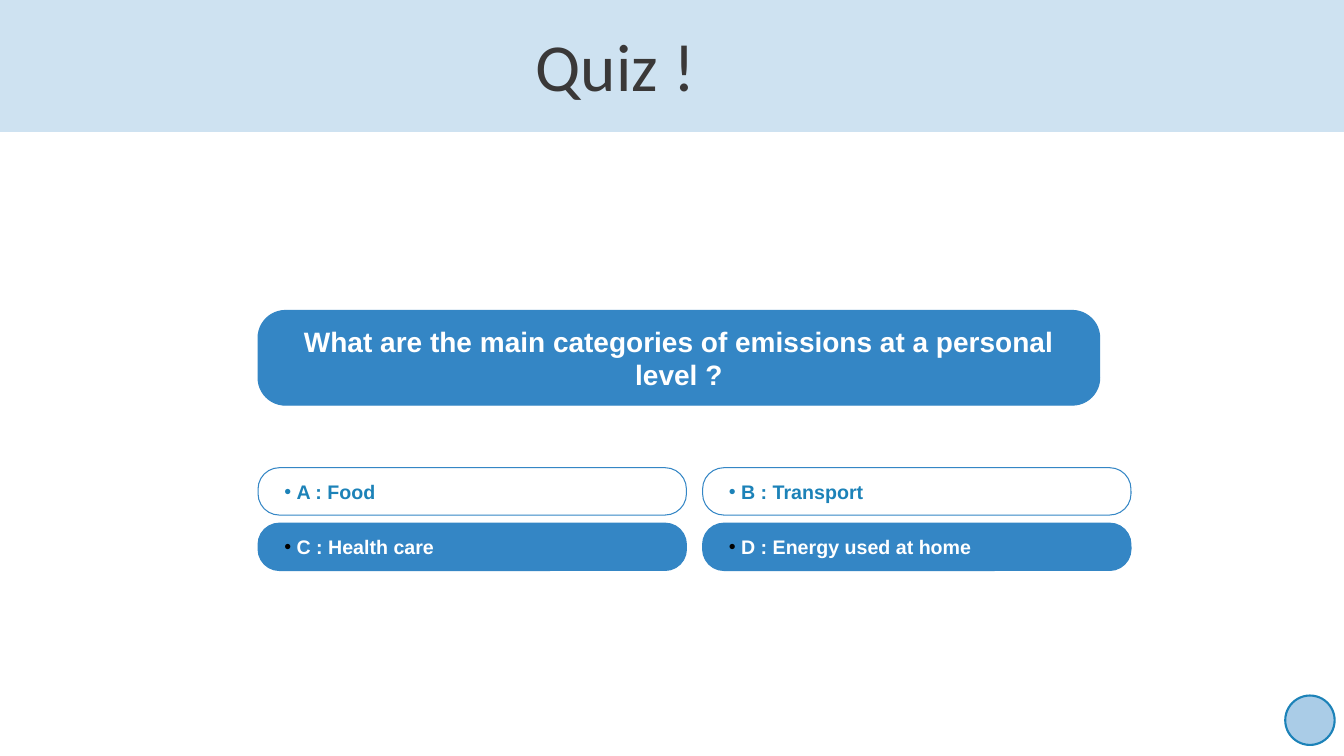
from dataclasses import dataclass

from lxml.etree import SubElement
from pptx import Presentation
from pptx.dml.color import RGBColor
from pptx.enum.shapes import MSO_SHAPE
from pptx.enum.text import MSO_ANCHOR, MSO_AUTO_SIZE, PP_ALIGN
from pptx.oxml.ns import qn
from pptx.shapes.autoshape import Shape
from pptx.slide import Slide
from pptx.util import Inches, Length, Pt

WHITE = RGBColor(0xFF, 0xFF, 0xFF)
BLACK = RGBColor(0x00, 0x00, 0x00)
BLUE = RGBColor(0x34, 0x86, 0xC5)
DEEP = RGBColor(0x1C, 0x82, 0xB8)
PALE = RGBColor(0xCE, 0xE2, 0xF1)
SKY = RGBColor(0xAA, 0xCC, 0xE7)
GREY = RGBColor(0x3A, 0x38, 0x38)

# The grid has ten columns and ten rows to the inch
COLS, ROWS = 133.33, 75
LEFT, TOP = 25.6, 46.4
STEP, DROP = 44.1, 5.5


@dataclass(frozen=True)
class Area:
    col: float
    row: float
    wide: float
    high: float

    def box(self) -> tuple[Length, ...]:
        return tuple(Inches(n / 10) for n in (self.col, self.row, self.wide, self.high))


@dataclass(frozen=True)
class Look:
    fill: RGBColor
    ink: RGBColor
    dot: RGBColor


@dataclass(frozen=True)
class Answer:
    text: str
    col: int
    row: int
    look: Look


LIGHT = Look(WHITE, DEEP, DEEP)
DARK = Look(BLUE, WHITE, BLACK)
ANSWERS = (
    Answer("A : Food", 0, 0, LIGHT),
    Answer("B : Transport", 1, 0, LIGHT),
    Answer("C : Health care", 0, 1, DARK),
    Answer("D : Energy used at home", 1, 1, DARK),
)


def draw(slide: Slide, kind: MSO_SHAPE, area: Area, fill: RGBColor,
         line: RGBColor | None = None, width: float = 0.75) -> Shape:
    shape = slide.shapes.add_shape(kind, *area.box())
    shape.shadow.inherit = False
    shape.fill.solid()
    shape.fill.fore_color.rgb = fill
    if line is None:
        shape.line.fill.background()
    else:
        shape.line.color.rgb = line
        shape.line.width = Pt(width)
    return shape


def write(shape: Shape, text: str, size: int, ink: RGBColor, align: PP_ALIGN,
          face: str = "Arial", bold: bool = True, dot: RGBColor | None = None) -> None:
    frame = shape.text_frame
    frame.text = text
    frame.word_wrap = True
    frame.auto_size = MSO_AUTO_SIZE.NONE
    frame.vertical_anchor = MSO_ANCHOR.MIDDLE
    para = frame.paragraphs[0]
    para.alignment = align
    if dot is not None:
        bullet(para._p.get_or_add_pPr(), dot)
    for run in para.runs:
        run.font.name = face
        run.font.size = Pt(size)
        run.font.bold = bold
        run.font.color.rgb = ink


def bullet(props, dot: RGBColor) -> None:
    indent = Inches(0.12)
    props.set("marL", str(indent))
    props.set("indent", str(-indent))
    color = SubElement(props, qn("a:buClr"))
    SubElement(color, qn("a:srgbClr")).set("val", str(dot))
    SubElement(props, qn("a:buFont")).set("typeface", "Arial")
    SubElement(props, qn("a:buChar")).set("char", "•")


def main() -> None:
    deck = Presentation()
    deck.slide_width, deck.slide_height = Inches(COLS / 10), Inches(ROWS / 10)
    slide = deck.slides.add_slide(deck.slide_layouts[5])

    # Banner, behind the title
    band = draw(slide, MSO_SHAPE.RECTANGLE, Area(0, 0, COLS, 13.1), PALE)
    slide.shapes._spTree.insert(2, band._element)
    title = slide.shapes.title
    title.left, title.top, title.width, title.height = Area(11, 1.1, 100.1, 10.7).box()
    write(title, "Quiz !", 48, GREY, PP_ALIGN.CENTER, "Calibri", False)

    # Question
    ask = draw(slide, MSO_SHAPE.ROUNDED_RECTANGLE, Area(LEFT, 30.8, 83.5, 9.4), BLUE, BLUE)
    ask.adjustments[0] = 0.29
    write(ask, "What are the main categories of emissions at a personal level ?",
          20, WHITE, PP_ALIGN.CENTER)

    # Answers, two by two
    for item in ANSWERS:
        area = Area(LEFT + item.col * STEP, TOP + item.row * DROP, 42.5, 4.7)
        pill = draw(slide, MSO_SHAPE.ROUNDED_RECTANGLE, area, item.look.fill, BLUE)
        pill.adjustments[0] = 0.45
        pill.text_frame.margin_left = Inches(0.2)
        write(pill, item.text, 14, item.look.ink, PP_ALIGN.LEFT, dot=item.look.dot)

    # Corner badge
    draw(slide, MSO_SHAPE.OVAL, Area(127.5, 69, 4.9, 4.9), SKY, DEEP, 1.5)

    deck.save("out.pptx")


if __name__ == "__main__":
    main()
